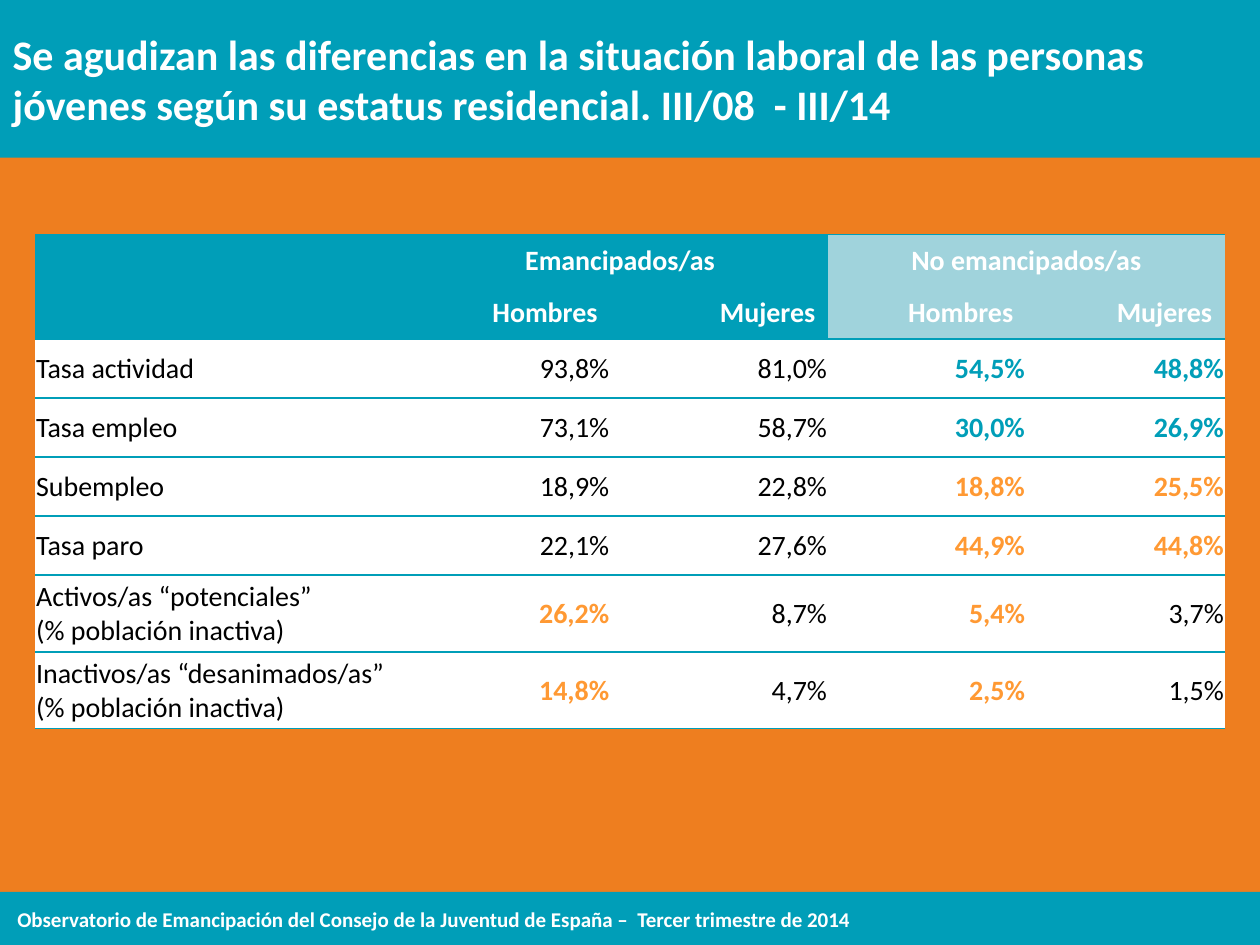
"""Build the slide on the labour situation of young people by residential status."""
from dataclasses import dataclass

from lxml import etree
from pptx import Presentation
from pptx import util as u
from pptx.dml.color import RGBColor
from pptx.enum import shapes, text
from pptx.oxml.ns import qn

LEFT, CENTER, RIGHT = text.PP_ALIGN.LEFT, text.PP_ALIGN.CENTER, text.PP_ALIGN.RIGHT
PLAIN_TABLE = "{2D5ABB26-0587-4C30-8999-92F81FD0307C}"


@dataclass(frozen=True)
class Theme:
    font: str = "Calibri"
    teal: str = "009EB8"
    pale: str = "A0D3DC"
    orange: str = "EE7E1F"
    amber: str = "FF9933"
    white: str = "FFFFFF"
    black: str = "000000"
    title_size: int = 24
    table_size: int = 16
    footer_size: int = 12


THEME = Theme()
HEADLINE = ("Se agudizan las diferencias en la situación laboral de las personas "
            "jóvenes según su estatus residencial. III/08  - III/14")
SOURCE = ("Observatorio de Emancipación del Consejo de la Juventud de España –  "
          "Tercer trimestre de 2014")
GROUPS = ["", "Emancipados/as", "", "No emancipados/as", ""]
SEXES = ["", "Hombres", "Mujeres", "Hombres", "Mujeres"]
BLACK, TEAL, AMBER = THEME.black, THEME.teal, THEME.amber
RATES = [
    ("Tasa actividad", "93,8% 81,0% 54,5% 48,8%", (BLACK, BLACK, TEAL, TEAL)),
    ("Tasa empleo", "73,1% 58,7% 30,0% 26,9%", (BLACK, BLACK, TEAL, TEAL)),
    ("Subempleo", "18,9% 22,8% 18,8% 25,5%", (BLACK, BLACK, AMBER, AMBER)),
    ("Tasa paro", "22,1% 27,6% 44,9% 44,8%", (BLACK, BLACK, AMBER, AMBER)),
    ("Activos/as “potenciales”\n(% población inactiva)",
     "26,2% 8,7% 5,4% 3,7%", (AMBER, BLACK, AMBER, BLACK)),
    ("Inactivos/as “desanimados/as”\n(% población inactiva)",
     "14,8% 4,7% 2,5% 1,5%", (AMBER, BLACK, AMBER, BLACK)),
]
COLUMN_WIDTHS = [7.6, 3.99, 4.39, 3.99, 4.01]
ROW_HEIGHTS = [1.05] * 2 + [1.19] * 4 + [1.55] * 2


def paint(fill, color):
    """Give a fill one solid colour."""
    fill.solid()
    fill.fore_color.rgb = RGBColor.from_string(color)


def write(frame, words, *, size, color=THEME.white, bold=True, align=LEFT):
    """Write one paragraph per line of words in the given format."""
    frame.text = words
    for paragraph in frame.paragraphs:
        paragraph.alignment = align
        font = paragraph.font
        font.name, font.size, font.bold = THEME.font, u.Pt(size), bold
        font.color.rgb = RGBColor.from_string(color)


def rule(cell, side, color):
    """Draw a one-point border on one side of a cell."""
    line = etree.Element(qn(f"a:{side}"), w=str(u.Pt(1)))
    solid = etree.SubElement(line, qn("a:solidFill"))
    etree.SubElement(solid, qn("a:srgbClr"), val=color)
    cell._tc.get_or_add_tcPr().insert(0, line)


class SlideBuilder:
    """Hold the theme and the current slide."""

    def __init__(self, deck, theme):
        self.theme = theme
        self.slide = deck.slides.add_slide(deck.slide_layouts[5])
        paint(self.slide.background.fill, theme.orange)

    def title(self, words, left, top, width, height):
        """Move the title placeholder and turn it into a banner."""
        banner = self.slide.shapes.title
        banner.left, banner.top = u.Cm(left), u.Cm(top)
        banner.width, banner.height = u.Cm(width), u.Cm(height)
        paint(banner.fill, self.theme.teal)
        frame = banner.text_frame
        frame.word_wrap = True
        frame.auto_size = text.MSO_AUTO_SIZE.NONE
        frame.vertical_anchor = text.MSO_ANCHOR.MIDDLE
        write(frame, words, size=self.theme.title_size)

    def band(self, left, top, width, height):
        """Add a plain teal rectangle."""
        strip = self.slide.shapes.add_shape(
            shapes.MSO_SHAPE.RECTANGLE, u.Cm(left), u.Cm(top), u.Cm(width), u.Cm(height))
        strip.shadow.inherit = False
        strip.line.fill.background()
        paint(strip.fill, self.theme.teal)

    def caption(self, words, left, top, width, height):
        """Add a line of footer text."""
        box = self.slide.shapes.add_textbox(
            u.Cm(left), u.Cm(top), u.Cm(width), u.Cm(height))
        frame = box.text_frame
        frame.word_wrap = True
        frame.auto_size = text.MSO_AUTO_SIZE.SHAPE_TO_FIT_TEXT
        write(frame, words, size=self.theme.footer_size)

    def cell(self, cell, words, fill, **style):
        """Fill a table cell and write its text."""
        cell.vertical_anchor = text.MSO_ANCHOR.MIDDLE
        paint(cell.fill, fill)
        write(cell.text_frame, words, size=self.theme.table_size, **style)

    def table(self, left, top):
        """Add the table of rates with its two header rows."""
        frame = self.slide.shapes.add_table(
            len(ROW_HEIGHTS), len(COLUMN_WIDTHS), u.Cm(left), u.Cm(top),
            u.Cm(sum(COLUMN_WIDTHS)), u.Cm(sum(ROW_HEIGHTS)))
        grid = frame.table
        grid._tbl.tblPr.find(qn("a:tableStyleId")).text = PLAIN_TABLE
        grid.first_row = grid.horz_banding = False
        for column, width in zip(grid.columns, COLUMN_WIDTHS):
            column.width = u.Cm(width)
        for row, height in zip(grid.rows, ROW_HEIGHTS):
            row.height = u.Cm(height)
        self.header(grid)
        self.body(grid)

    def header(self, grid):
        """Fill the group and sex headings."""
        for row, (headings, align) in enumerate([(GROUPS, CENTER), (SEXES, RIGHT)]):
            for column, heading in enumerate(headings):
                fill = self.theme.teal if column < 3 else self.theme.pale
                self.cell(grid.cell(row, column), heading, fill, align=align)
        for column in (1, 3):
            grid.cell(0, column).merge(grid.cell(0, column + 1))
        for column in range(len(SEXES)):
            rule(grid.cell(1, column), "lnB", self.theme.teal)
            rule(grid.cell(0, column), "lnT", self.theme.teal)

    def body(self, grid):
        """Fill the rates, with the highlighted ones bold and coloured."""
        for row, (label, values, colors) in enumerate(RATES, start=2):
            entries = zip([label, *values.split()], [self.theme.black, *colors])
            for column, (words, color) in enumerate(entries):
                cell = grid.cell(row, column)
                cell.margin_left = cell.margin_right = cell.margin_top = u.Cm(0.02)
                cell.margin_bottom = 0
                self.cell(cell, words, self.theme.white, color=color,
                          bold=color != self.theme.black,
                          align=RIGHT if column else LEFT)
                rule(cell, "lnB", self.theme.teal)


def main():
    """Build and save the slide."""
    deck = Presentation()
    deck.slide_width, deck.slide_height = u.Cm(25.4), u.Cm(19.05)
    page = SlideBuilder(deck, THEME)
    page.band(0, 17.98, 25.4, 1.07)
    page.caption(SOURCE, 0.1, 18.16, 19.6, 0.76)
    page.title(HEADLINE, 0, 0, 25.4, 3.18)
    page.table(0.71, 4.73)
    deck.save("out.pptx")


if __name__ == "__main__":
    main()
